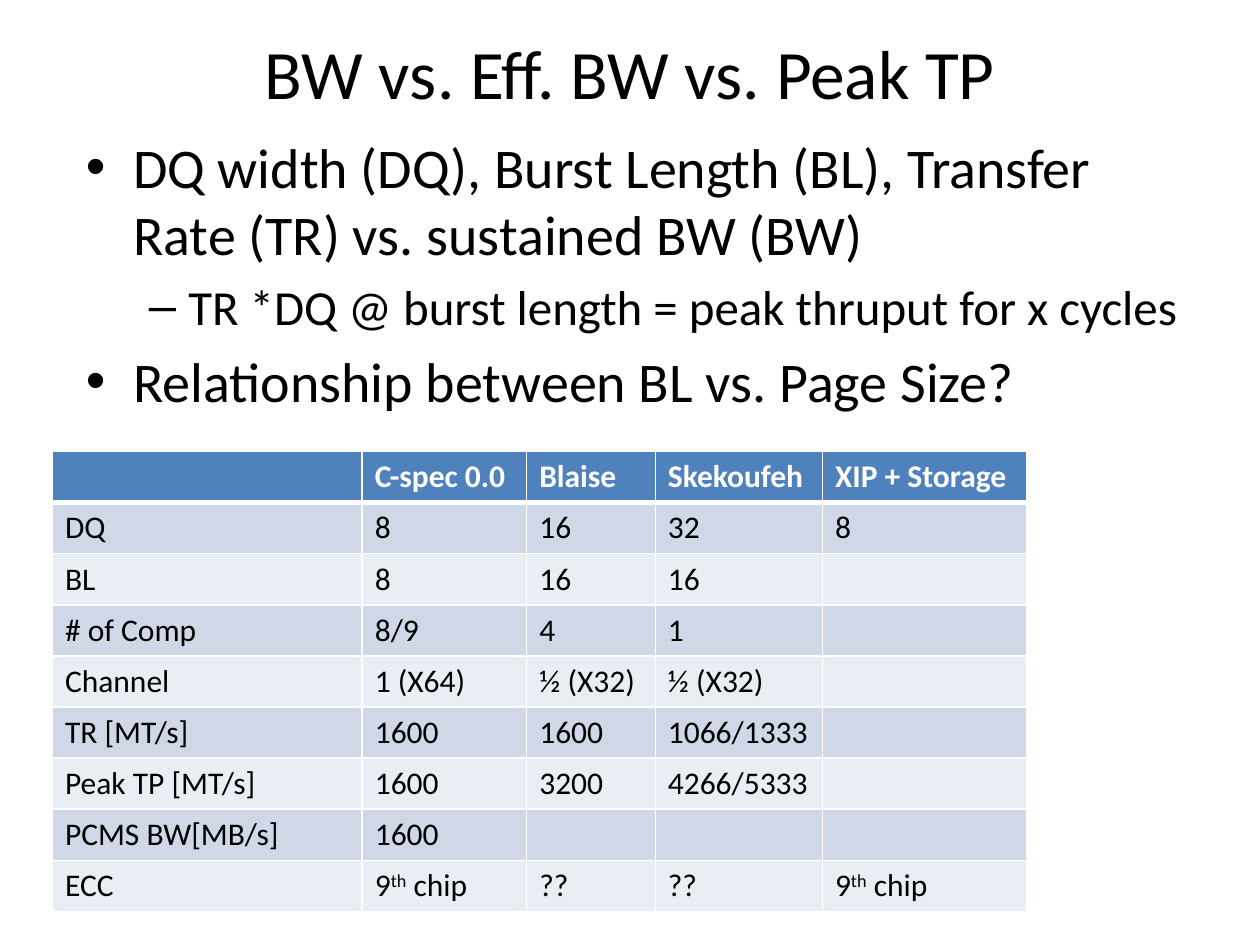
from lxml import etree
from pptx import Presentation
from pptx import util as u
from pptx.dml.color import RGBColor
from pptx.enum import text as t
from pptx.oxml import ns

Pt = u.Pt

BULLETS = [
    (0, "DQ width (DQ), Burst Length (BL), Transfer Rate (TR) vs. sustained BW (BW)"),
    (1, "TR *DQ @ burst length = peak thruput for x cycles"),
    (0, "Relationship between BL vs. Page Size?"),
]
LEVELS = [("•", 32, 27, -27), ("–", 28, 58.5, -22.5)]
WIDTHS = [177, 94, 73.5, 95.5, 116.5]
ROWS = [
    ["", "C-spec 0.0", "Blaise", "Skekoufeh", "XIP + Storage"],
    ["DQ", "8", "16", "32", "8"],
    ["BL", "8", "16", "16", ""],
    ["# of Comp", "8/9", "4", "1", ""],
    ["Channel", "1 (X64)", "½ (X32)", "½ (X32)", ""],
    ["TR [MT/s]", "1600", "1600", "1066/1333", ""],
    ["Peak TP [MT/s]", "1600", "3200", "4266/5333", ""],
    ["PCMS BW[MB/s]", "1600", "", "", ""],
    ["ECC", "9^th^ chip", "??", "??", "9^th^ chip"],
]


def color(code):
    """Turn a hex string into a colour."""
    return RGBColor.from_string(code)


def write(para, words, size=18, ink="000000", bold=False, align=None):
    """Fill a paragraph; words between carets are raised."""
    para.alignment = align
    for i, part in enumerate(words.split("^")):
        if not part:
            continue
        run = para.add_run()
        run.text = part
        font = run.font
        font.name, font.size, font.bold = "Calibri", Pt(size), bold
        font.color.rgb = color(ink)
        if i % 2:
            font._element.set("baseline", "30000")


def place(shape, box):
    """Move a shape to a box given in points."""
    shape.left, shape.top, shape.width, shape.height = map(Pt, box)


def title(slide, box):
    """Set the slide title."""
    shape = slide.shapes.title
    place(shape, box)
    frame = shape.text_frame
    frame.vertical_anchor = t.MSO_ANCHOR.MIDDLE
    frame.auto_size = t.MSO_AUTO_SIZE.NONE
    write(frame.paragraphs[0], "BW vs. Eff. BW vs. Peak TP", size=39.6,
          align=t.PP_ALIGN.CENTER)


def bullets(slide, box):
    """Add the bulleted text."""
    frame = slide.shapes.add_textbox(*map(Pt, box)).text_frame
    frame.word_wrap = True
    for i, (level, words) in enumerate(BULLETS):
        para = frame.add_paragraph() if i else frame.paragraphs[0]
        mark, size, left, hang = LEVELS[level]
        para.level = level
        para.space_before = Pt(size * 0.2)
        write(para, words, size=size, align=t.PP_ALIGN.LEFT)
        props = para._p.get_or_add_pPr()
        props.set("marL", str(Pt(left)))
        props.set("indent", str(Pt(hang)))
        etree.SubElement(props, ns.qn("a:buFont"), typeface="Arial")
        etree.SubElement(props, ns.qn("a:buChar"), char=mark)


def border(cell, side, width):
    """Draw one white cell edge."""
    props = cell._tc.get_or_add_tcPr()
    line = etree.SubElement(props, ns.qn("a:ln" + side), w=str(Pt(width)))
    fill = etree.SubElement(line, ns.qn("a:solidFill"))
    etree.SubElement(fill, ns.qn("a:srgbClr"), val="FFFFFF")


def table(slide, box):
    """Add the comparison table."""
    grid = slide.shapes.add_table(len(ROWS), len(WIDTHS), *map(Pt, box)).table
    for col, width in zip(grid.columns, WIDTHS):
        col.width = Pt(width)
    for r, row in enumerate(ROWS):
        grid.rows[r].height = Pt(box[3] / len(ROWS))
        head = r == 0
        back = "4F81BD" if head else "D0D8E8" if r % 2 else "E9EDF4"
        for c, words in enumerate(row):
            cell = grid.cell(r, c)
            for side in "LRTB":
                thick = (head and side == "B") or (r == 1 and side == "T")
                border(cell, side, 3 if thick else 1)
            cell.fill.solid()
            cell.fill.fore_color.rgb = color(back)
            write(cell.text_frame.paragraphs[0], words, bold=head,
                  ink="FFFFFF" if head else "000000")


def main():
    """Build and save the slide."""
    deck = Presentation()
    deck.slide_width, deck.slide_height = Pt(720), Pt(540)
    slide = deck.slides.add_slide(deck.slide_layouts[5])
    title(slide, (36, 21.6, 648, 38.4))
    bullets(slide, (42, 72, 648, 356.4))
    table(slide, (30, 258, sum(WIDTHS), 262.8))
    deck.save("out.pptx")


if __name__ == "__main__":
    main()
